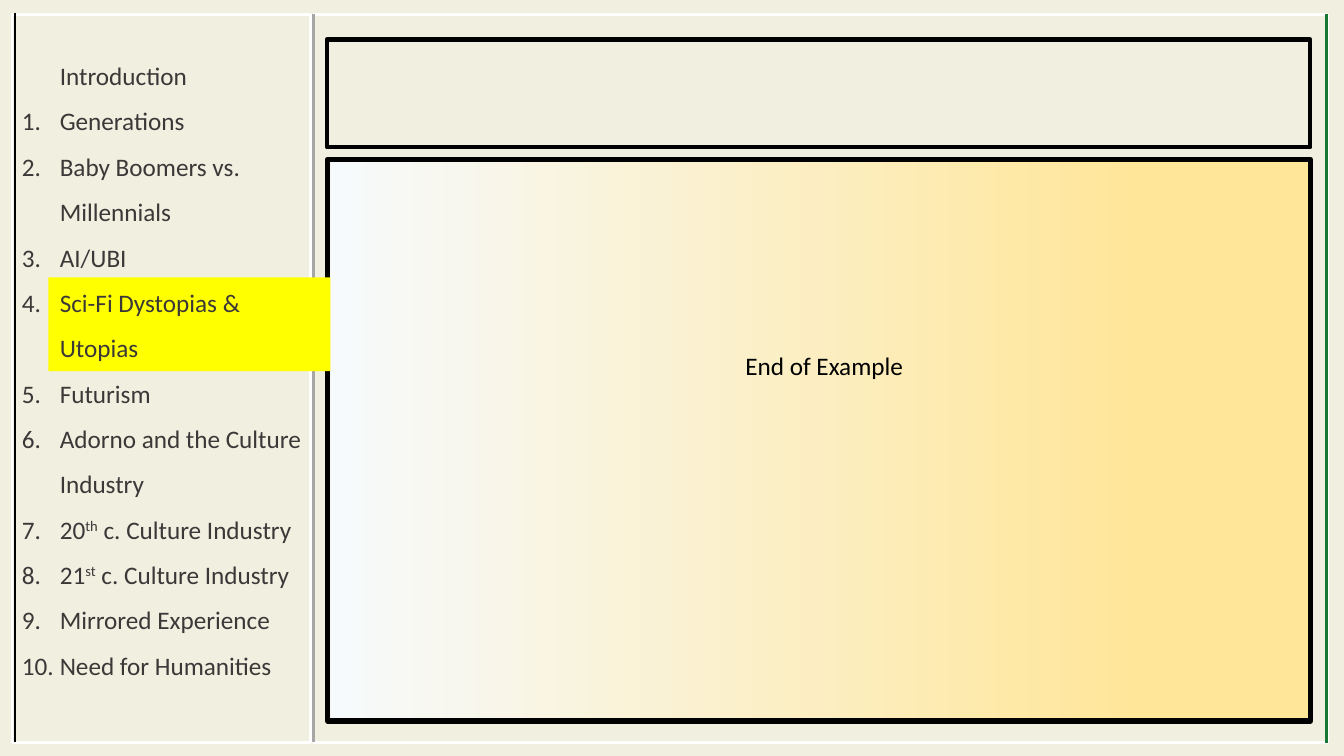
import pptx
import pptx.dml.color
import pptx.enum.shapes
import pptx.enum.text
import pptx.oxml.ns
import pptx.util
from lxml import etree

Pt = pptx.util.Pt
COLORS = {
    "background": "F0EFE0", "frame": "FFFFFF", "border": "000000",
    "divider": "A6A6A6", "edge": "177734", "highlight": "FFFF00",
    "fade_start": "F7FAFD", "fade_end": "FFE699",
    "menu": "3B3838", "body": "000000",
}
# Each topic is a list of (text, is superscript) runs.
TOPICS = [
    [("Introduction", False)],
    [("Generations", False)],
    [("Baby Boomers vs. Millennials", False)],
    [("AI/UBI", False)],
    [("Sci-Fi Dystopias & Utopias", False)],
    [("Futurism", False)],
    [("Adorno and the Culture Industry", False)],
    [("20", False), ("th", True), (" c. Culture Industry", False)],
    [("21", False), ("st", True), (" c. Culture Industry", False)],
    [("Mirrored Experience", False)],
    [("Need for Humanities", False)],
]
INDENT = 27


def rgb(name):
    return pptx.dml.color.RGBColor.from_string(COLORS[name])


def add_panel(slide, box, fill=None, line=None, width=0):
    """Add a rectangle; a pair of fill colours makes a left-to-right fade."""
    panel = slide.shapes.add_shape(
        pptx.enum.shapes.MSO_SHAPE.RECTANGLE, *map(Pt, box))
    panel.shadow.inherit = False
    if isinstance(fill, tuple):
        panel.fill.gradient()
        panel.fill.gradient_angle = 0
        for stop, color, position in zip(panel.fill.gradient_stops, fill, (0, 0.83)):
            stop.color.rgb = rgb(color)
            stop.position = position
    elif fill:
        panel.fill.solid()
        panel.fill.fore_color.rgb = rgb(fill)
    else:
        panel.fill.background()
    if line:
        panel.line.color.rgb = rgb(line)
        panel.line.width = Pt(width)
    else:
        panel.line.fill.background()


def add_rule(slide, x, top, bottom, color, width):
    rule = slide.shapes.add_connector(
        pptx.enum.shapes.MSO_CONNECTOR.STRAIGHT, Pt(x), Pt(top), Pt(x), Pt(bottom))
    rule.line.color.rgb = rgb(color)
    rule.line.width = Pt(width)
    etree.SubElement(rule._element.spPr, pptx.oxml.ns.qn("a:effectLst"))


def add_text_frame(slide, box):
    frame = slide.shapes.add_textbox(*map(Pt, box)).text_frame
    frame.word_wrap = True
    frame.auto_size = pptx.enum.text.MSO_AUTO_SIZE.SHAPE_TO_FIT_TEXT
    return frame


def add_run(paragraph, text, color, superscript=False):
    run = paragraph.add_run()
    run.text = text
    for name, value in {"name": "Calibri", "size": Pt(18)}.items():
        setattr(run.font, name, value)
    run.font.color.rgb = rgb(color)
    if superscript:
        run._r.get_or_add_rPr().set("baseline", "30000")


def add_menu(slide, box):
    """List the topics, numbering all but the introduction."""
    frame = add_text_frame(slide, box)
    for index, topic in enumerate(TOPICS):
        entry = frame.add_paragraph() if index else frame.paragraphs[0]
        entry.line_spacing = 1.5
        properties = entry._p.get_or_add_pPr()
        properties.set("marL", str(Pt(INDENT)))
        properties.set("indent", str(-Pt(INDENT) if index else 0))
        if index:
            number = etree.SubElement(properties, pptx.oxml.ns.qn("a:buAutoNum"))
            number.set("type", "arabicPeriod")
        for text, superscript in topic:
            add_run(entry, text, "menu", superscript)


def add_message(slide, box, text):
    message = add_text_frame(slide, box).paragraphs[0]
    message.alignment = pptx.enum.text.PP_ALIGN.CENTER
    add_run(message, text, "body")


def main():
    deck = pptx.Presentation()
    deck.slide_width, deck.slide_height = Pt(960), Pt(540)
    slide = deck.slides.add_slide(deck.slide_layouts[6])
    slide.background.fill.solid()
    slide.background.fill.fore_color.rgb = rgb("background")

    add_panel(slide, (236, 114.5, 699, 399.5), fill=("fade_start", "fade_end"))
    add_panel(slide, (233.5, 28.3, 702.5, 77), line="border", width=3)
    add_panel(slide, (234, 114, 702, 401), line="border", width=4)
    add_panel(slide, (224, 10.2, 724, 520.3), line="frame", width=2)
    add_panel(slide, (8.6, 10.2, 213, 520.3), line="frame", width=2)
    add_rule(slide, 224, 10, 530, "divider", 2)
    add_rule(slide, 947.5, 10, 530.5, "edge", 1.5)
    add_rule(slide, 10.8, 9.5, 530, "border", 1.5)
    add_panel(slide, (34.5, 198.2, 201.5, 67), fill="highlight")
    add_menu(slide, (8.6, 28.8, 215.3, 465))
    add_message(slide, (435, 247, 307.5, 29), "End of Example")
    deck.save("out.pptx")


if __name__ == "__main__":
    main()
